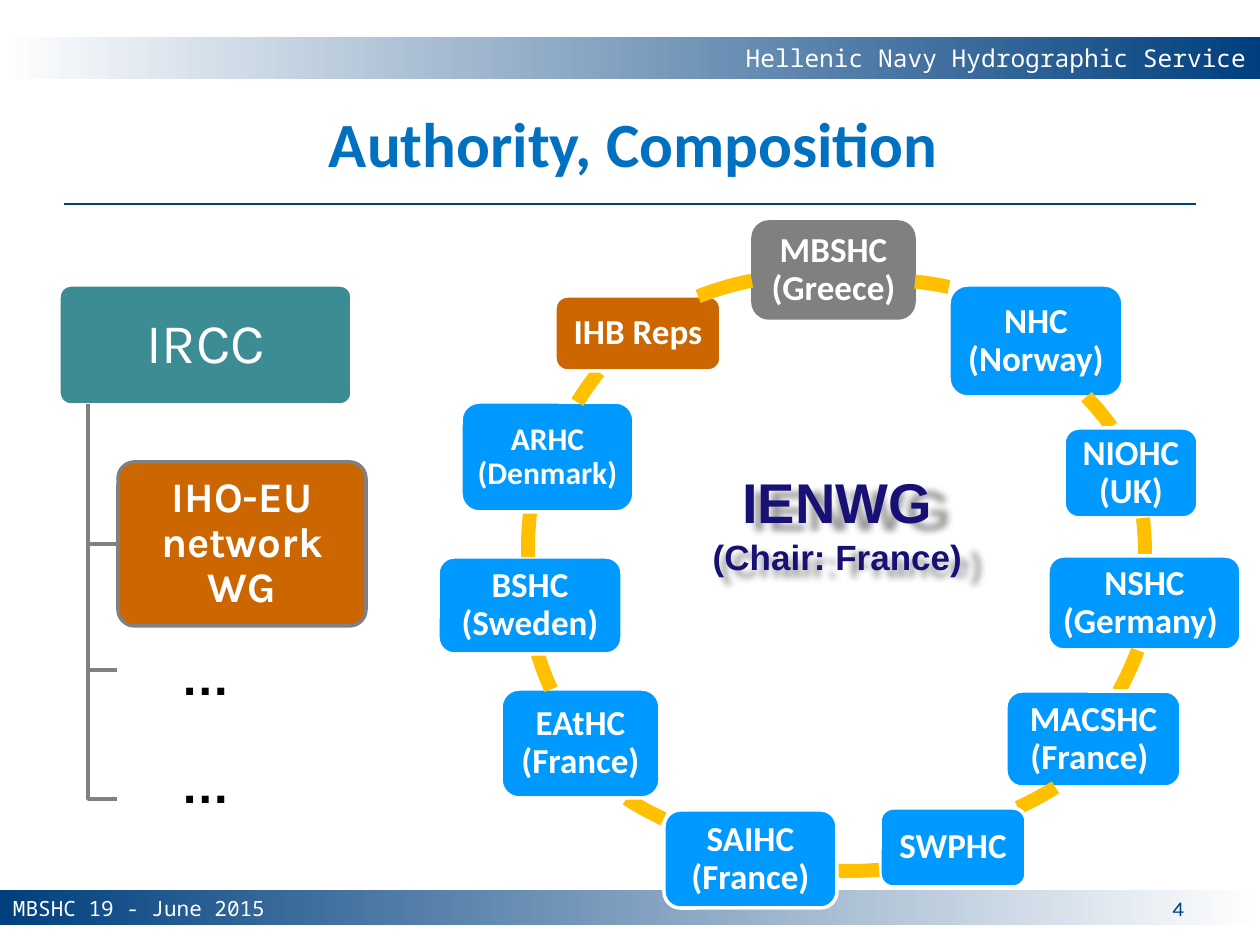
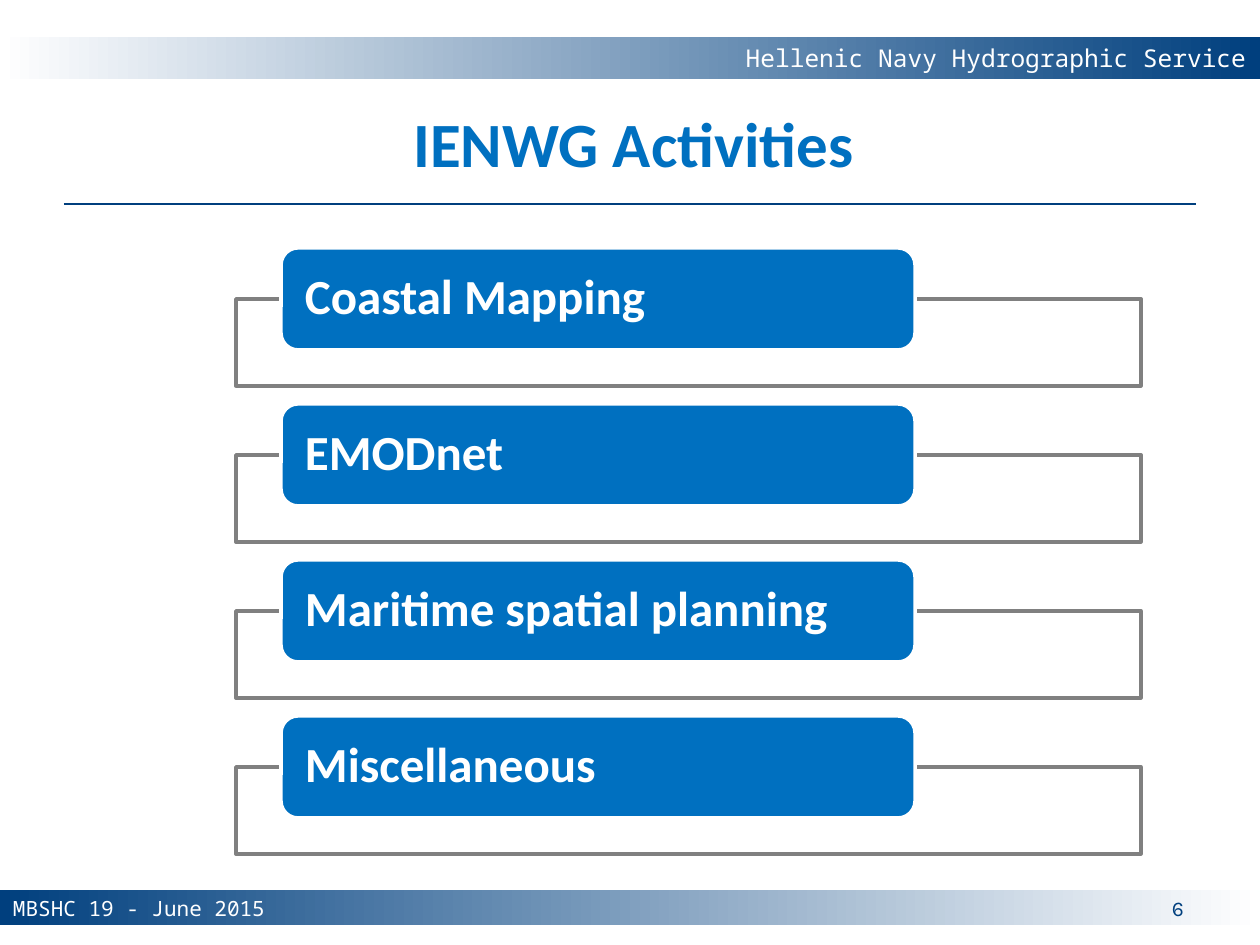
import math
from dataclasses import dataclass

from lxml import etree
from pptx import Presentation
from pptx.dml.color import RGBColor
from pptx.enum import shapes, text
from pptx.oxml.ns import qn
from pptx.util import Pt

# ---- Content: boxes are (left, top, width, height) in px ----
HEADER = "Hellenic Navy Hydrographic Service"
FOOTER = "MBSHC 19 - June 2015"

COMPOSITION = {"title": "Authority, Composition", "number": "4"}
ACTIVITIES = {"title": "IENWG Activities", "number": "6"}

PARENT = ("IRCC", (59, 285, 293, 120))
CHILD = ("IHO-EU network WG", (118, 462, 248, 164))
TRUNK_X, BRANCH_X = 88, 117
BRANCHES = [(404, 544), (542, 670), (669, 799)]  # trunk top, branch level
MORE_GROUPS = [(168, 640, 137, 72), (168, 748, 137, 72)]

# Clockwise: label, box, colour, text style,
# then the circle (left, top) and the two ends of the arc to the next member
MEMBERS = [
    ("MBSHC (Greece)", (753, 222, 161, 96), "grey", "member", (578, 280), (915, 281), (949, 287)),
    ("NHC (Norway)", (949, 285, 174, 112), "sky", "member", (558, 300), (1086, 397), (1111, 427)),
    ("NIOHC (UK)", (1064, 428, 134, 90), "sky", "member", (534, 248), (1143, 518), (1145, 556)),
    ("NSHC (Germany) ", (1048, 556, 193, 94), "sky", "member", (546, 238), (1137, 650), (1118, 691)),
    ("MACSHC (France) ", (1006, 691, 175, 96), "sky", "member", (586, 224), (1056, 788), (1018, 808)),
    ("SWPHC", (880, 808, 146, 79), "sky", "member", (546, 260), (879, 869), (837, 871)),
    ("SAIHC (France)", (664, 810, 173, 98), "sky", "member", (486, 236), (664, 818), (627, 798)),
    ("EAtHC (France)", (501, 689, 159, 109), "sky", "member", (524, 258), (552, 689), (538, 654)),
    ("BSHC (Sweden)", (438, 557, 184, 97), "sky", "member", (528, 243), (528, 557), (530, 512)),
    ("ARHC (Denmark)", (461, 402, 173, 110), "sky", "small_member", (532, 257), (577, 402), (599, 372)),
    ("IHB Reps", (555, 296, 166, 75), "orange", "member", (505, 275), (698, 296), (752, 281)),
]
RING_SIZE = 611
HUB_BOX = (699, 462, 277, 124)
HUB_LINES = [("IENWG", "hub"), ("(Chair: France)", "chair")]

TOPICS = ["Coastal Mapping", "EMODnet", "Maritime spatial planning", "Miscellaneous"]
TOPIC_FRAME = (236, 299, 905, 87)
TOPIC_BAR = (281, 248, 634, 102)
TOPIC_PITCH = 156


# ---- Theme ----
@dataclass(frozen=True)
class Theme:
    navy: str = "003F7E"
    blue: str = "0070C0"
    sky: str = "0099FF"
    teal: str = "3C8C93"
    orange: str = "CC6600"
    amber: str = "FFC000"
    grey: str = "808080"
    indigo: str = "181175"
    white: str = "FFFFFF"
    black: str = "000000"
    # Text styles: font, points, bold
    title: tuple = ("Calibri", 36, True)
    header: tuple = ("Noto Sans Mono", 14, False)
    footer: tuple = ("Noto Sans Mono", 12, False)
    number: tuple = ("Karla", 12, False)
    parent: tuple = ("Karla", 32, False)
    child: tuple = ("Karla", 24, True)
    more: tuple = ("Arial", 28, True)
    member: tuple = ("Calibri", 20, True)
    small_member: tuple = ("Calibri", 18, True)
    hub: tuple = ("Arial", 32, True)
    chair: tuple = ("Arial", 20, True)
    topic: tuple = ("Calibri", 28, True)


T = Theme()
SCALE = 914400 / 126
LEFT, CENTER, RIGHT = (text.PP_ALIGN.LEFT, text.PP_ALIGN.CENTER, text.PP_ALIGN.RIGHT)
TOP, MIDDLE = text.MSO_ANCHOR.TOP, text.MSO_ANCHOR.MIDDLE
RECT, ROUNDED = (shapes.MSO_SHAPE.RECTANGLE, shapes.MSO_SHAPE.ROUNDED_RECTANGLE)


def emu(*lengths):
    return [round(n * SCALE) for n in lengths]


def rgb(name):
    return RGBColor.from_string(getattr(T, name))


# ---- Text ----
def write(s, lines, color, align=LEFT, anchor=TOP, inset=(13, 6), spacing=None, wrap=True):
    """Fill a shape with (text, style) lines, one paragraph each."""
    tf = s.text_frame
    tf.word_wrap = wrap
    tf.auto_size = text.MSO_AUTO_SIZE.NONE
    tf.vertical_anchor = anchor
    tf.margin_left = tf.margin_right = emu(inset[0])[0]
    tf.margin_top = tf.margin_bottom = emu(inset[1])[0]
    for i, (words, style) in enumerate(lines):
        p = tf.add_paragraph() if i else tf.paragraphs[0]
        p.alignment = align
        if spacing:
            p.line_spacing = spacing
        r = p.add_run()
        r.text = words
        r.font.name, size, r.font.bold = getattr(T, style)
        r.font.size = Pt(size)
        r.font.color.rgb = rgb(color)


def add_text(slide, box, lines, color, **options):
    s = slide.shapes.add_textbox(*emu(*box))
    write(s, lines, color, **options)
    return s


# ---- Shapes ----
def outline(s, color, width):
    s.line.color.rgb = rgb(color)
    s.line.width = Pt(width)


def add_box(slide, kind, box, fill=None, line=None):
    s = slide.shapes.add_shape(kind, *emu(*box))
    s.shadow.inherit = False
    if fill:
        s.fill.solid()
        s.fill.fore_color.rgb = rgb(fill)
    else:
        s.fill.background()
    if line:
        outline(s, line, 2)
    else:
        s.line.fill.background()
    return s


def add_label(slide, box, words, style, fill, line="white", align=CENTER,
              inset=(5, 5), corner=None):
    s = add_box(slide, ROUNDED, box, fill, line)
    if corner:
        s.adjustments[0] = corner
    write(s, [(words, style)], "white", align=align, anchor=MIDDLE, inset=inset, spacing=0.9)


def add_band(slide, box, start, end):
    s = add_box(slide, RECT, box)
    s.fill.gradient()
    s.fill.gradient_angle = 0
    for stop, color in zip(s.fill.gradient_stops, (start, end)):
        stop.color.rgb = rgb(color)
    return s


def add_path(slide, points, color, width):
    start, *rest = [emu(*point) for point in points]
    builder = slide.shapes.build_freeform(*start)
    builder.add_line_segments(rest, close=False)
    s = builder.convert_to_shape()
    s.shadow.inherit = False
    s.fill.background()
    outline(s, color, width)


def add_ring_arc(slide, corner, *ends):
    """Draw the part of a ring-sized circle that runs clockwise between two ends."""
    s = add_box(slide, shapes.MSO_SHAPE.ARC, (*corner, RING_SIZE, RING_SIZE))
    outline(s, "amber", 8)
    cx, cy = [n + RING_SIZE / 2 for n in corner]
    for i, (x, y) in enumerate(ends):
        degrees = math.degrees(math.atan2(y - cy, x - cx)) % 360
        s.adjustments[i] = degrees * 60000 / 100000  # angle units per adjustment unit


def add_soft_shadow(s):
    effects = etree.SubElement(s.element.spPr, qn("a:effectLst"))
    shadow = etree.SubElement(effects, qn("a:outerShdw"), blurRad="50800", dist="70000",
                              dir="2700000", sx="105000", algn="tl", rotWithShape="0")
    color = etree.SubElement(shadow, qn("a:srgbClr"), val=T.black)
    etree.SubElement(color, qn("a:alpha"), val="40000")


# ---- Slides ----
def new_slide(prs, title, number):
    slide = prs.slides.add_slide(prs.slide_layouts[5])
    add_band(slide, (0, 890, 1260, 35), "navy", "white")
    header = add_band(slide, (0, 37, 1260, 42), "white", "navy")
    write(header, [(HEADER, "header")], "white", align=RIGHT, anchor=MIDDLE)
    x1, x2, y = emu(64, 1196, 204)
    rule = slide.shapes.add_connector(shapes.MSO_CONNECTOR.STRAIGHT, x1, y, x2, y)
    outline(rule, "navy", 0.75)
    etree.SubElement(rule.element.spPr, qn("a:effectLst"))
    add_text(slide, (903, 890, 294, 30), [(number, "number")], "navy", align=RIGHT)
    add_text(slide, (0, 890, 399, 35), [(FOOTER, "footer")], "white")
    s = slide.shapes.title
    s.left, s.top, s.width, s.height = emu(59, 98, 1149, 89)
    write(s, [(title, "title")], "blue", align=CENTER)
    return slide


def build_composition(prs):
    slide = new_slide(prs, **COMPOSITION)
    # Hierarchy
    words, box = PARENT
    add_label(slide, box, words, "parent", "teal", corner=0.1)
    for top, level in BRANCHES:
        add_path(slide, [(TRUNK_X, top), (TRUNK_X, level), (BRANCH_X, level)], "grey", 2)
    words, box = CHILD
    add_label(slide, box, words, "child", "orange", line="grey", corner=0.1)
    for box in MORE_GROUPS:
        add_text(slide, box, [("…", "more")], "black")
    # Ring of members
    for words, box, color, style, corner, start, end in MEMBERS:
        edge = "grey" if color == "grey" else "white"
        add_label(slide, box, words, style, color, line=edge)
        add_ring_arc(slide, corner, start, end)
    hub = add_text(slide, HUB_BOX, HUB_LINES, "indigo", align=CENTER, wrap=False)
    add_soft_shadow(hub)


def build_activities(prs):
    slide = new_slide(prs, **ACTIVITIES)
    for i, topic in enumerate(TOPICS):
        frame, bar = [(x, y + i * TOPIC_PITCH, w, h) for x, y, w, h in (TOPIC_FRAME, TOPIC_BAR)]
        add_box(slide, RECT, frame, line="grey")
        add_label(slide, bar, topic, "topic", "blue", align=LEFT, inset=(19, 0))


def main():
    prs = Presentation()
    prs.slide_width, prs.slide_height = emu(1260, 945)
    build_composition(prs)
    build_activities(prs)
    prs.save("out.pptx")


if __name__ == "__main__":
    main()
